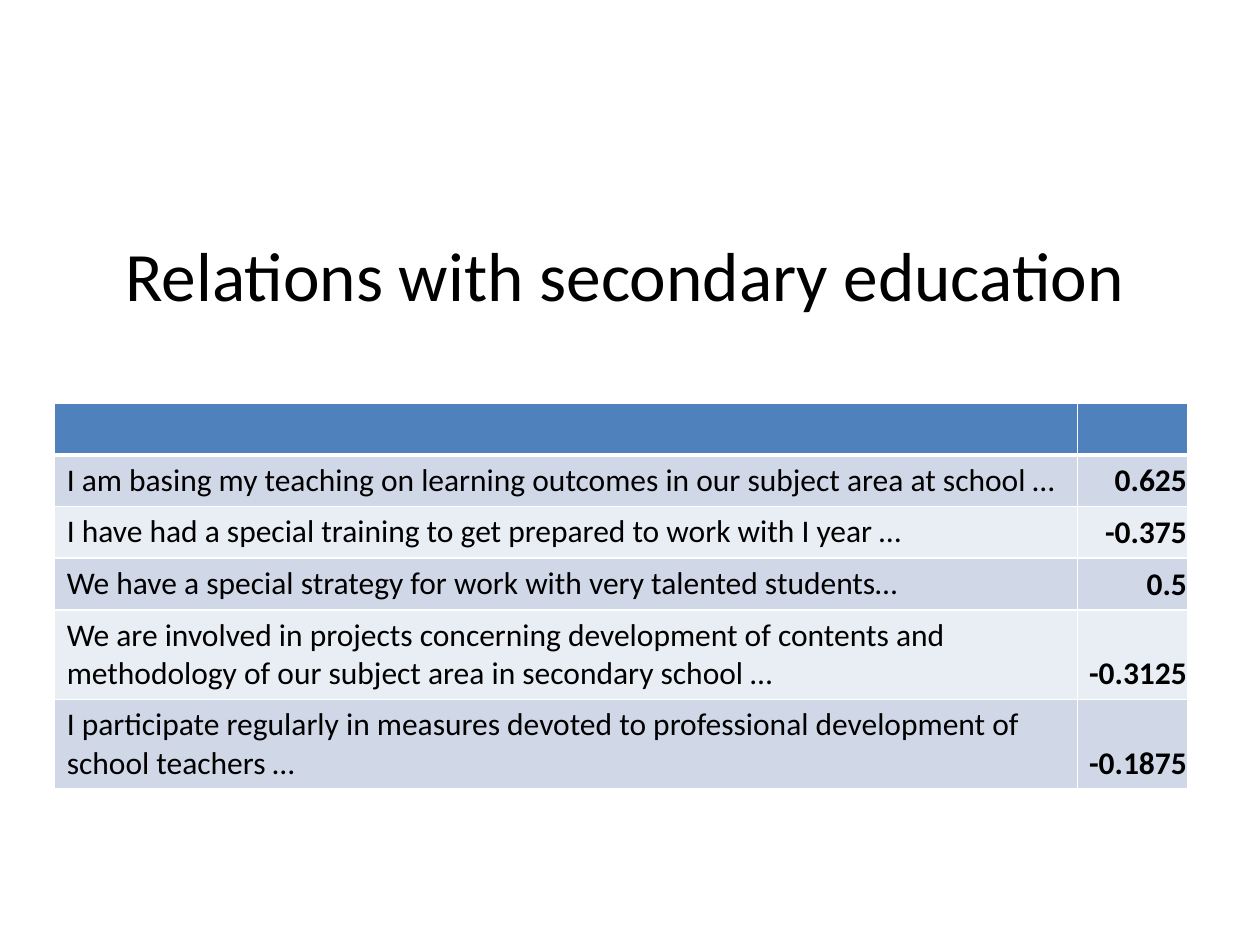
"""Build a slide with a title and a table of ratings on relations with secondary education."""
from lxml import etree
from pptx import Presentation, util as u
from pptx.dml.color import RGBColor
from pptx.enum import text
from pptx.oxml import ns

TITLE = "Relations with secondary education"
RATINGS = [
    ("I am basing my teaching on learning outcomes in our subject area at school …", "0.625"),
    ("I have had a special training to get prepared to work with I year …", "-0.375"),
    ("We have a special strategy for work with very talented students…", "0.5"),
    ("We are involved in projects concerning development of contents and "
     "methodology of our subject area in secondary school …", "-0.3125"),
    ("I participate regularly in measures devoted to professional development of "
     "school teachers …", "-0.1875"),
]
THEME = {
    "font": "Calibri", "title": 39.6, "body": 18, "ink": "000000",
    "header": "4F81BD", "bands": ("D0D8E8", "E9EDF4"), "rule": "FFFFFF",
}
COL_WIDTHS = (8.12, 0.88)
ROW_HEIGHT = 0.41


def add_run(p, content, size, bold=False):
    r = p.add_run()
    r.text = content
    r.font.name = THEME["font"]
    r.font.size = u.Pt(size)
    r.font.bold = bold
    r.font.color.rgb = RGBColor.from_string(THEME["ink"])


def style_cell(cell, fill, bottom=1):
    cell.fill.solid()
    cell.fill.fore_color.rgb = RGBColor.from_string(fill)
    tc_pr = cell._tc.get_or_add_tcPr()
    for i, (side, width) in enumerate(zip("LRTB", (1, 1, 1, bottom))):
        ln = etree.Element(ns.qn(f"a:ln{side}"), w=str(u.Pt(width)))
        solid = etree.SubElement(ln, ns.qn("a:solidFill"))
        etree.SubElement(solid, ns.qn("a:srgbClr"), val=THEME["rule"])
        tc_pr.insert(i, ln)


def add_title(s):
    sp = s.shapes.title
    sp.left, sp.top, sp.width, sp.height = map(u.Inches, (0.46, 1.55, 9, 1.25))
    tf = sp.text_frame
    tf.vertical_anchor = text.MSO_ANCHOR.MIDDLE
    p = tf.paragraphs[0]
    p.alignment = text.PP_ALIGN.CENTER
    add_run(p, TITLE, THEME["title"])


def add_ratings(s):
    n_rows = len(RATINGS) + 1
    box = map(u.Inches, (0.43, 3.2, sum(COL_WIDTHS), n_rows * ROW_HEIGHT))
    table = s.shapes.add_table(n_rows, len(COL_WIDTHS), *box).table
    for col, width in zip(table.columns, COL_WIDTHS):
        col.width = u.Inches(width)
    for row in table.rows:
        row.height = u.Inches(ROW_HEIGHT)
    for cell in table.rows[0].cells:
        style_cell(cell, THEME["header"], bottom=3)
    for i, (statement, score) in enumerate(RATINGS):
        label, value = table.rows[i + 1].cells
        for cell in (label, value):
            style_cell(cell, THEME["bands"][i % 2])
        add_run(label.text_frame.paragraphs[0], statement, THEME["body"])
        value.vertical_anchor = text.MSO_ANCHOR.BOTTOM
        value.margin_left = value.margin_top = value.margin_right = u.Inches(0.01)
        p = value.text_frame.paragraphs[0]
        p.alignment = text.PP_ALIGN.RIGHT
        add_run(p, score, THEME["body"], bold=True)


def main():
    prs = Presentation()
    prs.slide_width, prs.slide_height = u.Inches(10), u.Inches(7.5)
    s = prs.slides.add_slide(prs.slide_layouts[5])
    add_title(s)
    add_ratings(s)
    prs.save("out.pptx")


if __name__ == "__main__":
    main()
